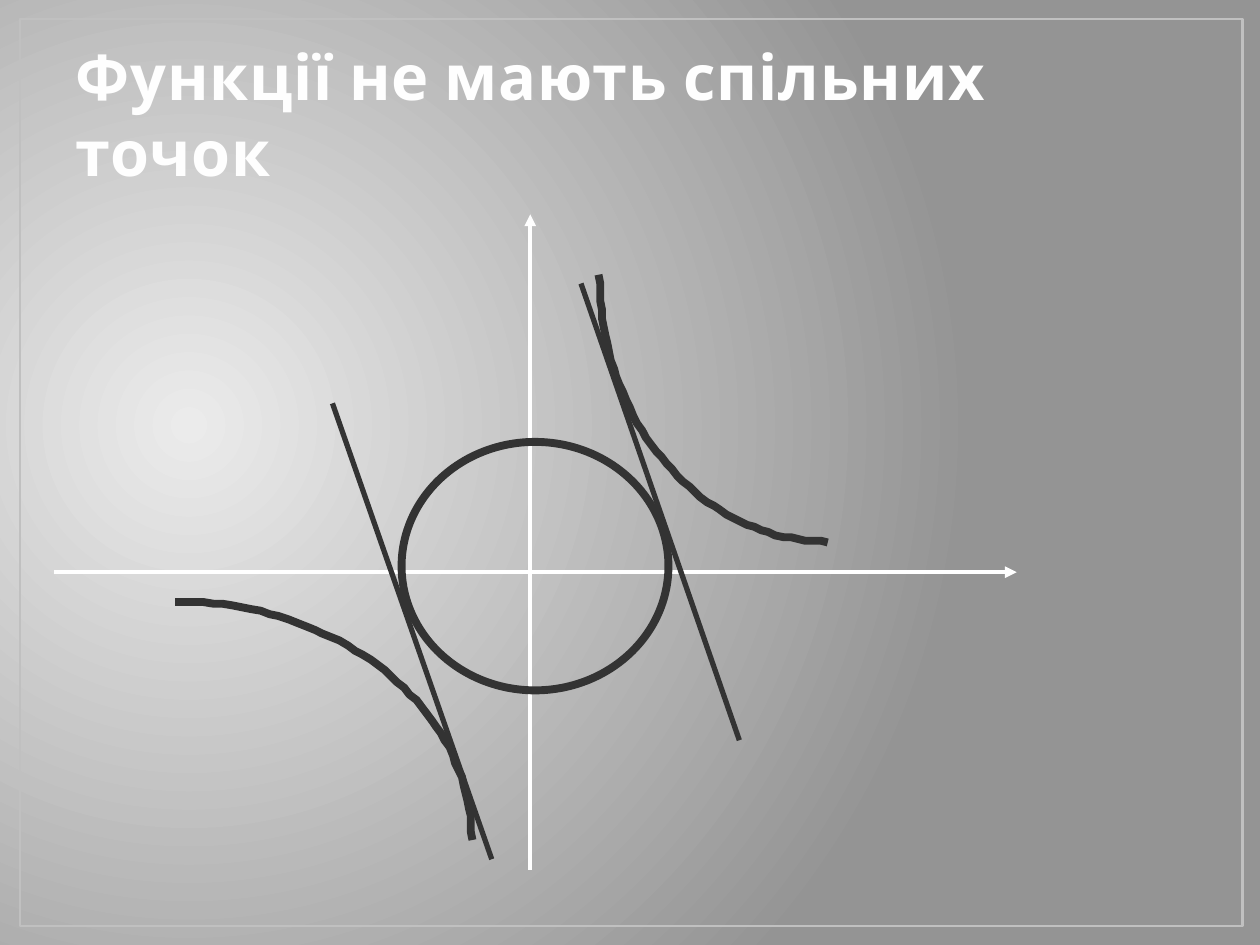
from math import cos, pi, sin

from lxml import etree
from pptx import Presentation
from pptx import util as u
from pptx.dml.color import RGBColor
from pptx.enum import shapes, text
from pptx.oxml import ns, parse_xml

DARK = RGBColor(0x33, 0x33, 0x33)
WHITE = RGBColor(0xFF, 0xFF, 0xFF)
TITLE = RGBColor(0xFE, 0xFE, 0xFE)
FRAME = RGBColor(0xC0, 0xC0, 0xC0)
BG_LIGHT = RGBColor(0xEB, 0xEB, 0xEB)
BG_DARK = RGBColor(0x94, 0x94, 0x94)


class Deck:
    """Draws graph elements on the current slide, with lengths in points."""

    title_font = {"name": "Cabin", "size": u.Pt(36), "bold": True}

    def __init__(self, prs):
        self.s = prs.slides.add_slide(prs.slide_layouts[6])

    def background(self, center, edge):
        fill = self.s.background.fill
        fill.gradient()
        for stop, color in zip(fill.gradient_stops, (center, edge)):
            stop.color.rgb = color
        lin = next(self.s.element.iter(ns.qn("a:lin")))
        lin.getparent().replace(lin, parse_xml(
            f'<a:path {ns.nsdecls("a")} path="circle">'
            '<a:fillToRect l="15000" t="50000" r="85000" b="60000"/></a:path>'))

    def outline(self, sp, color, width):
        sp.shadow.inherit = False
        sp.fill.background()
        sp.line.color.rgb = color
        sp.line.width = u.Pt(width)

    def shape(self, kind, box, color, width):
        sp = self.s.shapes.add_shape(kind, *map(u.Pt, box))
        self.outline(sp, color, width)

    def line(self, start, end, color, width, arrow=False):
        sp = self.s.shapes.add_connector(
            shapes.MSO_CONNECTOR.STRAIGHT, *map(u.Pt, start + end))
        sp.line.color.rgb = color
        sp.line.width = u.Pt(width)
        if arrow:
            etree.SubElement(sp.line._get_or_add_ln(), ns.qn("a:tailEnd"), type="triangle")
        etree.SubElement(sp._element.spPr, ns.qn("a:effectLst"))

    def quarter_arc(self, cx, cy, rx, ry, color, width, steps=48):
        angles = [i * pi / 2 / steps for i in range(steps + 1)]
        points = [(cx + rx * sin(t), cy + ry * cos(t)) for t in angles]
        builder = self.s.shapes.build_freeform(*points[0], scale=u.Pt(1))
        builder.add_line_segments(points[1:], close=False)
        self.outline(builder.convert_to_shape(), color, width)

    def title(self, wording, box, color):
        tf = self.s.shapes.add_textbox(*map(u.Pt, box)).text_frame
        tf.word_wrap = True
        tf.vertical_anchor = text.MSO_ANCHOR.BOTTOM
        r = tf.paragraphs[0].add_run()
        r.text = wording
        for key, value in self.title_font.items():
            setattr(r.font, key, value)
        r.font.color.rgb = color
        rPr = r.font._element
        rPr.set("spc", "50")
        rPr.insert(0, parse_xml(
            f'<a:ln {ns.nsdecls("a")} w="13335"><a:solidFill>'
            '<a:srgbClr val="606060"/></a:solidFill></a:ln>'))


def main():
    prs = Presentation()
    prs.slide_width, prs.slide_height = u.Pt(720), u.Pt(540)
    deck = Deck(prs)
    deck.background(BG_LIGHT, BG_DARK)
    deck.shape(shapes.MSO_SHAPE.RECTANGLE, (11.5, 10.8, 698.4, 518.4), FRAME, 1.5)
    deck.title("Функції не мають спільних точок", (36, 21.6, 648, 90), TITLE)
    for start, end in (((303, 497), (303, 122.5)), ((31, 327), (581, 327))):
        deck.line(start, end, WHITE, 2.25, arrow=True)
    deck.shape(shapes.MSO_SHAPE.OVAL, (229.5, 252.5, 152.5, 142), DARK, 4.5)
    for branch in ((99.5, 479.5, 170, -136), (473, 157, -130.5, 152.5)):
        deck.quarter_arc(*branch, DARK, 4.5)
    for start, end in (((190, 230.5), (281, 491)), ((332, 162), (422.5, 423))):
        deck.line(start, end, DARK, 3)
    prs.save("out.pptx")


if __name__ == "__main__":
    main()
